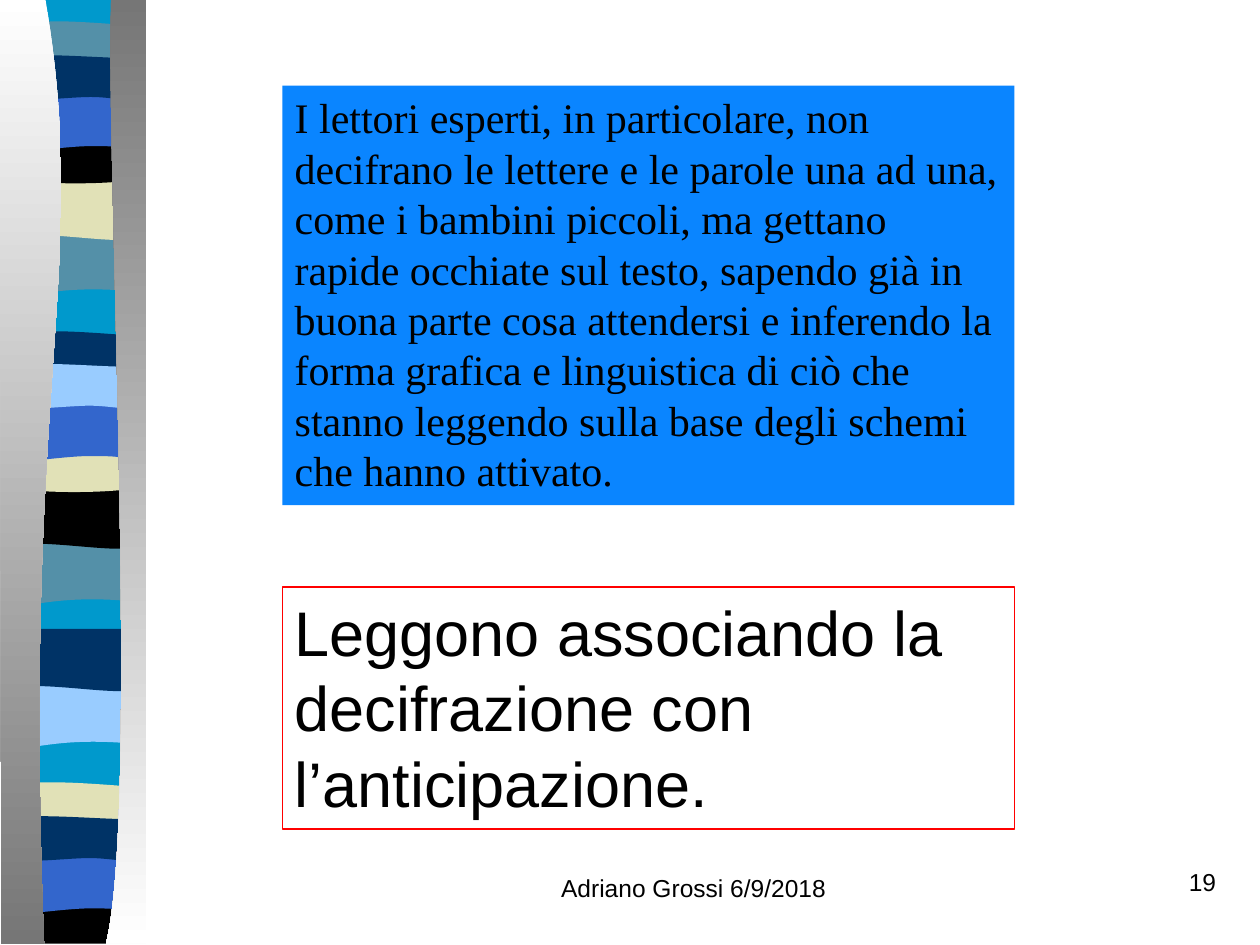
from lxml import etree
from pptx import Presentation
from pptx.dml.color import RGBColor
from pptx.enum.shapes import MSO_SHAPE
from pptx.enum.text import MSO_ANCHOR, PP_ALIGN
from pptx.oxml.ns import qn
from pptx.util import Inches, Pt

RECT = MSO_SHAPE.RECTANGLE
TOP = MSO_ANCHOR.TOP
LEFT, CENTER, RIGHT = PP_ALIGN.LEFT, PP_ALIGN.CENTER, PP_ALIGN.RIGHT

SLIDE_W, SLIDE_H = 10, 7.5
BODY_X, BODY_W = 2.24, 5.81
FOOT_Y, FOOT_H = 6.83, 0.5
UNITS = 1000  # outline units to the inch
BAND_W = 1.08

BLACK, WHITE, GREY = "000000", "FFFFFF", "767676"
NAVY, BLUE, SKY = "003366", "3366CC", "99CCFF"
TEAL, SAND, CYAN = "5490A8", "E1E1B7", "0099CC"

# Outlines: a pair is a line end, six numbers are a Bezier curve.
# Each one is measured from the band's top-left corner.
OUTLINES = {
    "backing": [(BAND_W, 0), (BAND_W, 7.48), (0, 7.48), (0, 0)],
    "dip": [(BAND_W, 0), (BAND_W, 0.47), (0.33, 0.39, 0.18, 0.55, 0, 0.47),
            (0, 0)],
    "wave": [(BAND_W, 0), (BAND_W, 0.47), (0.9, 0.55, 0.33, 0.41, 0, 0.47),
             (0, 0)],
    "ribbon": [(BAND_W, 0.05), (BAND_W, 0.29),
               (0.9, 0.33, 0.18, 0.33, 0, 0.29), (0, 0.05),
               (0.07, 0, 0.23, 0.01, 0.41, 0.01),
               (0.59, 0.01, 0.94, 0.04, BAND_W, 0.05)],
    "bowl": [(BAND_W, 0), (BAND_W, 0.33), (0.9, 0.39, 0.18, 0.39, 0, 0.33),
             (0, 0), (0.66, 0.05, 0.85, 0, BAND_W, 0)],
    "arch": [(BAND_W, 0), (BAND_W, 0.47),
             (0.91, 0.42, 0.84, 0.42, 0.66, 0.42),
             (0.48, 0.42, 0.16, 0.47, 0, 0.47), (0, 0)],
    "swell": [(BAND_W, 0.05), (BAND_W, 0.36),
              (1.01, 0.41, 0.84, 0.36, 0.66, 0.36),
              (0.48, 0.36, 0.11, 0.41, 0, 0.36), (0, 0.05),
              (0.15, 0, 0.73, 0.05, 0.91, 0.05),
              (1.09, 0.05, 1.05, 0.05, BAND_W, 0.05)],
    "base": [(BAND_W, 0), (BAND_W, 0.37), (0.01, 0.37), (0, 0),
             (0.66, 0.05, 0.85, 0, BAND_W, 0)],
}

# Outline, left, top and colour of each band, from back to front
BANDS = [
    ("backing", 0.06, -0.01, CYAN),
    ("dip", 0.06, 1.85, TEAL), ("wave", 0.06, 1.41, SAND),
    ("ribbon", 0.06, 0.16, TEAL), ("bowl", 0.06, 1.08, BLACK),
    ("arch", 0.06, 0.74, BLUE), ("swell", 0.06, 0.41, NAVY),
    ("dip", 0.05, 4.31, TEAL), ("wave", 0.05, 3.86, BLACK),
    ("ribbon", 0.05, 2.62, NAVY), ("bowl", 0.05, 3.53, SAND),
    ("arch", 0.05, 3.2, BLUE), ("swell", 0.05, 2.86, SKY),
    ("dip", 0.06, 5.44, SKY), ("wave", 0.06, 4.99, NAVY),
    ("ribbon", 0.05, 6.2, SAND), ("base", 0.05, 7.12, BLACK),
    ("arch", 0.05, 6.79, BLUE), ("swell", 0.05, 6.45, NAVY),
]

# Shaded edges on both sides of the bands, with top and bottom colours
EDGES = [
    ([(0.36, -0.01), (0.72, 2.16, 0.17, 2.96, 0.35, 7.49), (0.01, 7.49),
      (0, -0.01)], WHITE, GREY),
    ([(0.88, -0.01), (0.84, 1.25, 1.11, 6.46, 0.84, 7.49), (1.16, 7.49),
      (1.16, 0)], GREY, WHITE),
]


def rgb(value):
    return RGBColor.from_string(value)


def add_outline(shapes, outline, x=0, y=0):
    points = [(round((x + step[i]) * UNITS), round((y + step[i + 1]) * UNITS))
              for step in outline for i in range(0, len(step), 2)]
    builder = shapes.build_freeform(*points[0], scale=Inches(1) / UNITS)
    builder.add_line_segments(points[1:], close=True)
    sp = builder.convert_to_shape()
    sp.shadow.inherit = False
    sp.line.fill.background()
    # Join each run of three curve points into one Bezier segment
    lines = iter(sp._element.xpath(".//a:path/a:lnTo"))
    for step in outline[1:]:
        first = next(lines)
        if len(step) == 6:
            curve = etree.Element(qn("a:cubicBezTo"))
            first.addprevious(curve)
            for line in (first, next(lines), next(lines)):
                curve.append(line[0])
                line.getparent().remove(line)
    return sp


def add_side_strip(slide):
    shapes = slide.shapes.add_group_shape().shapes
    for name, x, y, colour in BANDS:
        sp = add_outline(shapes, OUTLINES[name], x, y)
        sp.fill.solid()
        sp.fill.fore_color.rgb = rgb(colour)
    for outline, *colours in EDGES:
        sp = add_outline(shapes, outline)
        sp.fill.gradient()
        sp.fill.gradient_angle = 270
        for stop, colour in zip(sp.fill.gradient_stops, colours):
            stop.color.rgb = rgb(colour)


def write(sp, text, size, font="Arial", inset=0.05, **paragraph):
    tf = sp.text_frame
    frame = {"word_wrap": True, "vertical_anchor": TOP,
             "margin_left": Inches(0.1), "margin_right": Inches(0.1),
             "margin_top": Inches(inset), "margin_bottom": Inches(inset)}
    for key, value in frame.items():
        setattr(tf, key, value)
    p = tf.paragraphs[0]
    for key, value in paragraph.items():
        setattr(p, key, value)
    r = p.add_run()
    r.text = text
    for key, value in {"size": Pt(size), "name": font}.items():
        setattr(r.font, key, value)
    r.font.color.rgb = rgb(BLACK)


def add_panel(slide, box, text, size, font, fill=None, line=None):
    sp = slide.shapes.add_shape(RECT, *map(Inches, box))
    sp.shadow.inherit = False
    for part, colour in ((sp.fill, fill), (sp.line.fill, line)):
        if colour:
            part.solid()
            part.fore_color.rgb = rgb(colour)
        else:
            part.background()
    if line:
        sp.line.width = Pt(0.75)
    write(sp, text, size, font, alignment=LEFT)


def add_footer(slide, y, h):
    sp = slide.shapes.add_textbox(*map(Inches, (3.92, y, 3.17, h)))
    write(sp, "Adriano Grossi 6/9/2018", 14, inset=0.1,
          alignment=CENTER, space_before=Pt(9))
    sp = slide.shapes.add_textbox(*map(Inches, (7.67, y, 2.08, h)))
    write(sp, "19", 14, alignment=RIGHT)


def main():
    prs = Presentation()
    prs.slide_width, prs.slide_height = Inches(SLIDE_W), Inches(SLIDE_H)
    slide = prs.slides.add_slide(prs.slide_layouts[6])
    add_side_strip(slide)
    add_footer(slide, FOOT_Y, FOOT_H)
    add_panel(slide, (BODY_X, 0.68, BODY_W, 3.33),
              "I lettori esperti, in particolare, non decifrano le lettere e "
              "le parole una ad una, come i bambini piccoli, ma gettano rapide "
              "occhiate sul testo, sapendo già in buona parte cosa attendersi "
              "e inferendo la forma grafica e linguistica di ciò che stanno "
              "leggendo sulla base degli schemi che hanno attivato.",
              24, "Times New Roman", fill="0A85FF")
    add_panel(slide, (BODY_X, 4.66, BODY_W, 1.92),
              "Leggono associando la decifrazione con l’anticipazione.",
              36, "Arial", line="FF0000")
    prs.save("out.pptx")


if __name__ == "__main__":
    main()
